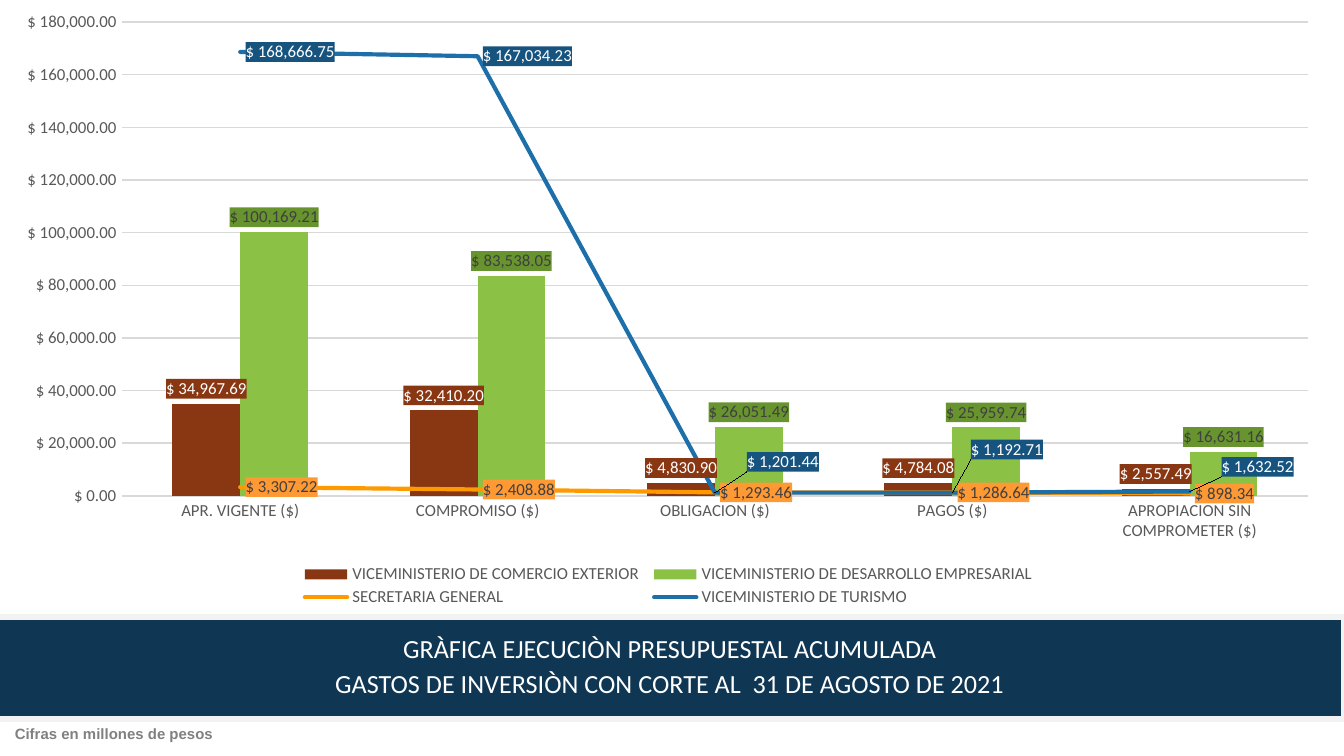
from copy import deepcopy

from pptx import Presentation
from pptx.chart.data import CategoryChartData
from pptx.dml.color import RGBColor
from pptx.enum.chart import (
    XL_CHART_TYPE as ChartType,
    XL_LABEL_POSITION as LabelPos,
    XL_LEGEND_POSITION as LegendPos,
    XL_MARKER_STYLE as MarkerStyle,
    XL_TICK_MARK as TickMark,
)
from pptx.enum.text import MSO_ANCHOR as Anchor, PP_ALIGN as Align
from pptx.oxml import parse_xml
from pptx.oxml.ns import nsdecls, qn
from pptx.util import Cm, Pt

COLORS = {
    "navy": "0F3754", "white": "FFFFFF", "edge": "F2F2F2", "grid": "D9D9D9",
    "axis": "595959", "dark": "404040", "caption": "808080", "black": "000000",
    "comercio": "893713", "empresarial": "8BC145",
    "secretaria": "FF9900", "turismo": "1D6FA9",
    "empresarial_tag": "68942F", "secretaria_tag": "FF9933", "turismo_tag": "16537F",
}
MONEY = '"$"\\ #,##0.00'
STAGES = ["APR. VIGENTE ($)", "COMPROMISO ($)", "OBLIGACION ($)", "PAGOS ($)",
          "APROPIACION SIN COMPROMETER ($)"]
# name, values, series colour, label background, label text
BUDGETS = [
    ("VICEMINISTERIO DE COMERCIO EXTERIOR",
     [34967.69, 32410.20, 4830.90, 4784.08, 2557.49], "comercio", "comercio", "white"),
    ("VICEMINISTERIO DE DESARROLLO EMPRESARIAL",
     [100169.21, 83538.05, 26051.49, 25959.74, 16631.16],
     "empresarial", "empresarial_tag", "dark"),
    ("SECRETARIA GENERAL",
     [3307.22, 2408.88, 1293.46, 1286.64, 898.34], "secretaria", "secretaria_tag", "dark"),
    ("VICEMINISTERIO DE TURISMO",
     [168666.75, 167034.23, 1201.44, 1192.71, 1632.52], "turismo", "turismo_tag", "white"),
]
BAR_COUNT = 2
# Shift of the crowded tourism labels, as shares of the chart size
TURISMO_SHIFTS = {2: (0.02, -0.05), 3: (0.01, -0.07), 4: (0.02, -0.04)}


def rgb(color):
    return RGBColor.from_string(COLORS[color])


def chart_xml(tag, content):
    return parse_xml(f"<c:{tag} {nsdecls('c', 'a')}>{content}</c:{tag}>")


def manual_layout(inner=False, **places):
    target = '<c:layoutTarget val="inner"/>' if inner else ""
    modes = '<c:xMode val="edge"/><c:yMode val="edge"/>' if "w" in places else ""
    sizes = "".join(f'<c:{key} val="{value}"/>' for key, value in places.items())
    return chart_xml("layout", f"<c:manualLayout>{target}{modes}{sizes}</c:manualLayout>")


class BudgetSlide:
    def __init__(self, deck):
        self.slide = deck.slides.add_slide(deck.slide_layouts[2])
        self.chart_font = {"name": "Calibri", "size": Pt(9)}

    def format(self, target, color=None, **values):
        for key, value in values.items():
            setattr(target, key, value)
        if color:
            target.color.rgb = rgb(color)

    def banner(self, lines, left, top, width, height):
        banner = self.slide.placeholders[1]
        self.format(banner, left=left, top=top, width=width, height=height)
        banner.fill.solid()
        banner.fill.fore_color.rgb = rgb("navy")
        self.format(banner.line, "edge", width=Pt(3))
        frame = banner.text_frame
        self.format(frame, text="\n".join(lines), vertical_anchor=Anchor.MIDDLE,
                    margin_left=0, margin_top=0, margin_right=0, margin_bottom=0)
        for paragraph in frame.paragraphs:
            self.format(paragraph, alignment=Align.CENTER, line_spacing=0.9,
                        space_before=Pt(3.6))
            self.format(paragraph.runs[0].font, "white", name="Calibri", size=Pt(14),
                        bold=False)
        title = self.slide.shapes.title.element
        title.getparent().remove(title)

    def caption(self, text, *place):
        frame = self.slide.shapes.add_textbox(*place).text_frame
        self.format(frame, text=text, word_wrap=True)
        paragraph = frame.paragraphs[0]
        self.format(paragraph, line_spacing=0.9, space_before=Pt(8))
        self.format(paragraph.runs[0].font, "caption", name="Arial", size=Pt(8), bold=True)

    def chart(self, *place):
        data = CategoryChartData(number_format=MONEY)
        data.categories = STAGES
        for name, values, *_ in BUDGETS:
            data.add_series(name, values)
        chart = self.slide.shapes.add_chart(ChartType.COLUMN_CLUSTERED, *place, data).chart
        self.format(chart, has_title=False, has_legend=True)
        self.format(chart.font, "black", name="Calibri", size=Pt(10))
        self.axes(chart)
        self.legend(chart)
        self.split_lines(chart)

        bars, lines = chart.plots
        self.format(bars, gap_width=150, overlap=0, vary_by_categories=False)
        for series, (_, _, color, tag, text) in zip(bars.series, BUDGETS):
            series.format.fill.solid()
            series.format.fill.fore_color.rgb = rgb(color)
            self.labels(series, tag, text, LabelPos.OUTSIDE_END)
        for series, (_, _, color, tag, text) in zip(lines.series, BUDGETS[BAR_COUNT:]):
            series.smooth = False
            series.marker.style = MarkerStyle.NONE
            self.format(series.format.line, color, width=Pt(2.25))
            self.labels(series, tag, text, LabelPos.RIGHT)
        for outline in chart.element.xpath(".//c:lineChart/c:ser/c:spPr/a:ln"):
            outline.set("cap", "rnd")
        self.shift_labels(chart, lines.series[-1])

    def axes(self, chart):
        stages, amounts = chart.category_axis, chart.value_axis
        for axis in (stages, amounts):
            self.format(axis, major_tick_mark=TickMark.NONE, minor_tick_mark=TickMark.NONE)
            self.format(axis.tick_labels.font, "axis", **self.chart_font)
        self.format(stages.format.line, "grid", width=Pt(0.75))
        self.format(amounts, minimum_scale=0, maximum_scale=180000, major_unit=20000,
                    has_major_gridlines=True)
        self.format(amounts.major_gridlines.format.line, "grid", width=Pt(0.75))
        amounts.format.line.fill.background()
        self.format(amounts.tick_labels, number_format=MONEY, number_format_is_linked=False)
        plot_area = chart.element.xpath("c:chart/c:plotArea")[0]
        for layout in plot_area.findall(qn("c:layout")):
            plot_area.remove(layout)
        plot_area.insert(0, manual_layout(inner=True, x=0.09, y=0.036, w=0.89, h=0.768))

    def legend(self, chart):
        self.format(chart.legend, position=LegendPos.BOTTOM, include_in_layout=False)
        self.format(chart.legend.font, "axis", **self.chart_font)
        for layout in chart.element.xpath("c:chart/c:legend/c:layout"):
            layout.getparent().remove(layout)
        position = chart.element.xpath("c:chart/c:legend/c:legendPos")[0]
        position.addnext(manual_layout(x=0.22, y=0.91, w=0.56, h=0.08))

    def split_lines(self, chart):
        """Move the last series to a line plot on the same axes."""
        bar_plot = chart.element.xpath(".//c:barChart")[0]
        line_plot = chart_xml("lineChart",
                              '<c:grouping val="standard"/><c:varyColors val="0"/>')
        for series in bar_plot.findall(qn("c:ser"))[BAR_COUNT:]:
            for invert in series.findall(qn("c:invertIfNegative")):
                series.remove(invert)
            line_plot.append(series)
        line_plot.append(chart_xml("marker", ""))
        for axis_id in bar_plot.findall(qn("c:axId")):
            line_plot.append(deepcopy(axis_id))
        bar_plot.addnext(line_plot)

    def labels(self, series, tag, text, position):
        labels = series.data_labels
        self.format(labels, show_value=True, number_format=MONEY,
                    number_format_is_linked=False, position=position)
        self.format(labels.font, text, **self.chart_font)
        fill = f'<a:solidFill><a:srgbClr val="{COLORS[tag]}"/></a:solidFill>'
        labels_xml = labels.font and series.format and labels
        number_format = labels_xml.element if hasattr(labels_xml, "element") else None
        if number_format is None:
            number_format = labels_xml._element
        number_format.find(qn("c:numFmt")).addnext(chart_xml("spPr", fill))

    def shift_labels(self, chart, series):
        for index in TURISMO_SHIFTS:
            series.points[index].data_label.position = LabelPos.RIGHT
        shared = chart.element.xpath(".//c:lineChart/c:ser/c:dLbls")[-1]
        for label, (x, y) in zip(shared.findall(qn("c:dLbl")), TURISMO_SHIFTS.values()):
            looks = [deepcopy(shared.find(qn(tag)))
                     for tag in ("c:numFmt", "c:spPr", "c:txPr")]
            for old in label.xpath("c:layout|c:numFmt|c:spPr|c:txPr"):
                label.remove(old)
            for place, part in enumerate([manual_layout(x=x, y=y), *looks], 1):
                label.insert(place, part)


def main():
    deck = Presentation()
    deck.slide_width, deck.slide_height = Cm(25.4), Cm(14.29)
    page = BudgetSlide(deck)
    # Title banner
    page.banner(["GRÀFICA EJECUCIÒN PRESUPUESTAL ACUMULADA",
                 "GASTOS DE INVERSIÒN CON CORTE AL  31 DE AGOSTO DE 2021"],
                Cm(-0.08), Cm(11.66), Cm(25.48), Cm(1.93))
    # Units note
    page.caption("Cifras en millones de pesos", Cm(0.03), Cm(13.61), Cm(5.08), Cm(0.56))
    # Budget chart
    page.chart(Cm(0.03), Cm(0), Cm(25.2), Cm(11.66))
    deck.save("out.pptx")


if __name__ == "__main__":
    main()
